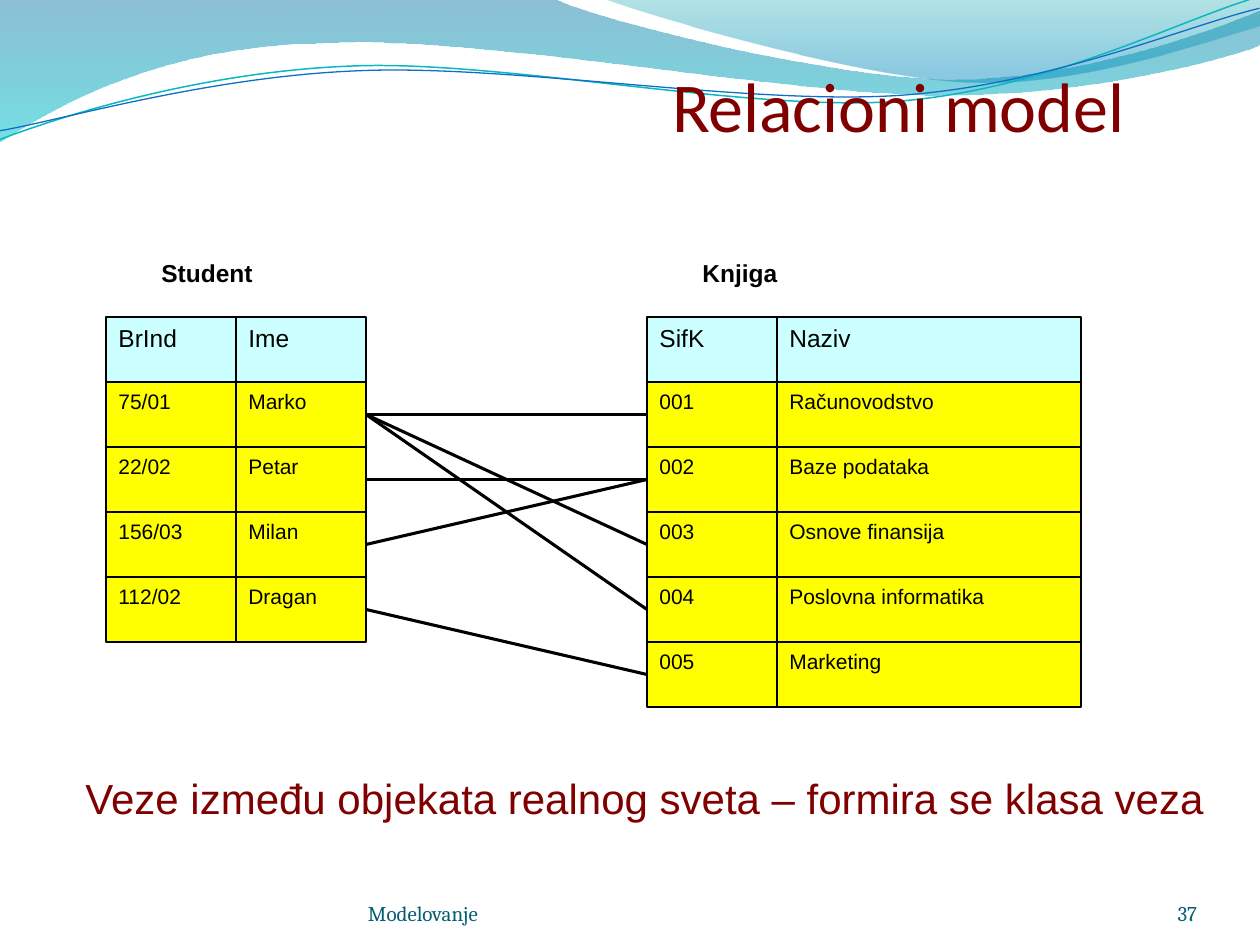
from dataclasses import dataclass, field
from typing import Any, NamedTuple

from lxml import etree
from pptx import Presentation
from pptx import util as u
from pptx.dml.color import RGBColor
from pptx.enum import shapes, text
from pptx.oxml.ns import qn

SCALE = u.Inches(1) / 126


class Theme:
    BLACK = RGBColor.from_string("000000")
    MAROON = RGBColor.from_string("800000")
    FOOTER = RGBColor.from_string("045D75")
    HEADER = RGBColor.from_string("CCFFFF")
    ROW = RGBColor.from_string("FFFF00")
    TITLE_SIZE, NOTE_SIZE, HEAD_SIZE, SMALL_SIZE = 40, 24, 14, 12


class Stop(NamedTuple):
    colour: str
    opacity: int
    position: float


class Ribbon(NamedTuple):
    points: list[tuple[int, ...]]
    stops: tuple[Stop, Stop]


class Strand(NamedTuple):
    points: list[tuple[int, ...]]
    colour: str
    width: float


@dataclass(frozen=True)
class Label:
    words: str
    box: tuple[int, int, int, int]
    font: dict[str, Any]
    colour: RGBColor
    frame: dict[str, Any] = field(default_factory=dict)
    align: text.PP_ALIGN = text.PP_ALIGN.LEFT


@dataclass(frozen=True)
class Relation:
    name: str
    left: int
    widths: tuple[int, int]
    rows: list[tuple[str, str]]


TABLE_TOP, ROW_HEIGHT = 317, 65
STRAND_TILT = 357.3
ARIAL = {"name": "Arial"}
NO_INSETS = dict.fromkeys(("margin_left", "margin_top", "margin_right", "margin_bottom"), 0)
FOOTER_FRAME = NO_INSETS | {"vertical_anchor": text.MSO_ANCHOR.BOTTOM}
FOOTER_FONT = {"name": "Cambria", "size": u.Pt(Theme.SMALL_SIZE)}

RIBBONS = [
    Ribbon([(0, 0), (554, -1), (600, 21, 837, 79, 955, 79), (1075, 79, 1207, 33, 1260, 11),
            (1261, 45), (1239, 55, 1096, 96, 940, 95), (784, 95, 481, 35, 324, 43),
            (163, 45, 58, 105, -1, 142)],
           (Stop("0074A1", 45, 0), Stop("00C6CF", 55, 1))),
    Ribbon([(604, -1), (641, 14, 859, 78, 969, 82), (1079, 87, 1211, 40, 1260, 26), (1260, 0)],
           (Stop("00A1A9", 30, 0), Stop("008BBF", 45, 0.8))),
]
STRANDS = [
    Strand([(-3, 110), (58, 90, 199, 52, 350, 53), (499, 53, 745, 118, 896, 114),
            (1049, 109, 1184, 45, 1260, 27)], "0AB8BF", 0.85),
    Strand([(-2, 101), (57, 94, 207, 57, 357, 58), (509, 58, 750, 112, 902, 108),
            (1052, 104, 1188, 52, 1262, 38)], "0F6FC6", 0.75),
]
LABELS = [
    Label("Relacioni model", (672, 0, 588, 147),
          {"name": "Calibri", "size": u.Pt(Theme.TITLE_SIZE)}, Theme.MAROON,
          FOOTER_FRAME | {"margin_top": u.Inches(0.05)}),
    Label("Modelovanje", (368, 876, 462, 50), FOOTER_FONT, Theme.FOOTER, FOOTER_FRAME),
    Label("37", (1092, 876, 105, 50), FOOTER_FONT, Theme.FOOTER, FOOTER_FRAME,
          text.PP_ALIGN.RIGHT),
    Label("Veze između objekata realnog sveta – formira se klasa veza", (73, 766, 1155, 63),
          ARIAL | {"size": u.Pt(Theme.NOTE_SIZE)}, Theme.MAROON,
          {"vertical_anchor": text.MSO_ANCHOR.MIDDLE}),
]
STUDENT = Relation("Student", 106, (130, 130), [
    ("BrInd", "Ime"), ("75/01", "Marko"), ("22/02", "Petar"),
    ("156/03", "Milan"), ("112/02", "Dragan")])
BOOK = Relation("Knjiga", 647, (130, 304), [
    ("SifK", "Naziv"), ("001", "Računovodstvo"), ("002", "Baze podataka"),
    ("003", "Osnove finansija"), ("004", "Poslovna informatika"), ("005", "Marketing")])
LOANS = [(1, 1), (1, 3), (1, 4), (2, 2), (3, 2), (4, 5)]


def px(*lengths: int) -> list[int]:
    return [round(length * SCALE) for length in lengths]


def apply(target: Any, values: dict[str, Any]) -> None:
    for key, value in values.items():
        setattr(target, key, value)


def draw_outline(slide: Any, points: list[tuple[int, ...]], close: bool) -> Any:
    start, *segments = points
    builder = slide.shapes.build_freeform(*start, scale=SCALE)
    builder.add_line_segments([pair for segment in segments
                               for pair in zip(segment[::2], segment[1::2])], close=close)
    outline = builder.convert_to_shape()
    outline.shadow.inherit = False
    steps = iter(list(outline._element.iter(qn("a:lnTo"))))
    for segment in segments:
        group = [next(steps) for _ in segment[::2]]
        if len(group) == 3:
            curve = etree.Element(qn("a:cubicBezTo"))
            group[0].addprevious(curve)
            for step in group:
                curve.append(step[0])
                step.getparent().remove(step)
    return outline


def draw_ribbon(slide: Any, ribbon: Ribbon) -> None:
    band = draw_outline(slide, ribbon.points, True)
    band.line.fill.background()
    band.fill.gradient()
    band.fill.gradient_angle = 270
    for slot, stop in zip(band.fill.gradient_stops, ribbon.stops):
        slot.color.rgb = RGBColor.from_string(stop.colour)
        slot.position = stop.position
    for colour, stop in zip(band._element.spPr.iter(qn("a:srgbClr")), ribbon.stops):
        etree.SubElement(colour, qn("a:alpha"), val=str(stop.opacity * 1000))


def draw_strand(slide: Any, strand: Strand) -> None:
    curve = draw_outline(slide, strand.points, False)
    curve.rotation = STRAND_TILT
    curve.fill.background()
    curve.line.color.rgb = RGBColor.from_string(strand.colour)
    curve.line.width = u.Pt(strand.width)


def write(holder: Any, label: Label) -> None:
    apply(holder.text_frame, {"word_wrap": True} | label.frame)
    paragraph = holder.text_frame.paragraphs[0]
    paragraph.alignment = label.align
    run = paragraph.add_run()
    run.text = label.words
    apply(run.font, label.font)
    run.font.color.rgb = label.colour


def draw_label(slide: Any, label: Label) -> None:
    write(slide.shapes.add_textbox(*px(*label.box)), label)


def draw_cell(slide: Any, words: str, box: tuple[int, int, int, int], header: bool) -> Any:
    cell = slide.shapes.add_shape(shapes.MSO_SHAPE.RECTANGLE, *px(*box))
    cell.shadow.inherit = False
    cell.fill.solid()
    cell.fill.fore_color.rgb = Theme.HEADER if header else Theme.ROW
    cell.line.color.rgb = Theme.BLACK
    cell.line.width = u.Pt(0.75)
    size = Theme.HEAD_SIZE if header else Theme.SMALL_SIZE
    write(cell, Label(words, box, ARIAL | {"size": u.Pt(size)}, Theme.BLACK,
                      {"vertical_anchor": text.MSO_ANCHOR.TOP}))
    return cell


def draw_relation(slide: Any, relation: Relation) -> list[list[Any]]:
    draw_label(slide, Label(relation.name, (relation.left + 43, 252, 174, 65),
                            ARIAL | {"size": u.Pt(Theme.HEAD_SIZE), "bold": True}, Theme.BLACK))
    lefts = (relation.left, relation.left + relation.widths[0])
    return [[draw_cell(slide, words,
                       (left, TABLE_TOP + index * ROW_HEIGHT, width, ROW_HEIGHT), index == 0)
             for words, left, width in zip(row, lefts, relation.widths)]
            for index, row in enumerate(relation.rows)]


def draw_loan(slide: Any, student: Any, book: Any) -> None:
    loan = slide.shapes.add_connector(shapes.MSO_CONNECTOR.STRAIGHT, 0, 0, 0, 0)
    loan.begin_connect(student, 3)
    loan.end_connect(book, 1)
    loan.line.color.rgb = Theme.BLACK
    loan.line.width = u.Pt(1.75)
    etree.SubElement(loan._element.spPr, qn("a:effectLst"))


def main() -> None:
    deck = Presentation()
    apply(deck, {"slide_width": u.Inches(10), "slide_height": u.Inches(7.5)})
    slide = deck.slides.add_slide(deck.slide_layouts[6])
    for ribbon in RIBBONS:
        draw_ribbon(slide, ribbon)
    for strand in STRANDS:
        draw_strand(slide, strand)
    for label in LABELS:
        draw_label(slide, label)
    students, books = (draw_relation(slide, relation) for relation in (STUDENT, BOOK))
    for student, book in LOANS:
        draw_loan(slide, students[student][1], books[book][0])
    deck.save("out.pptx")


if __name__ == "__main__":
    main()
